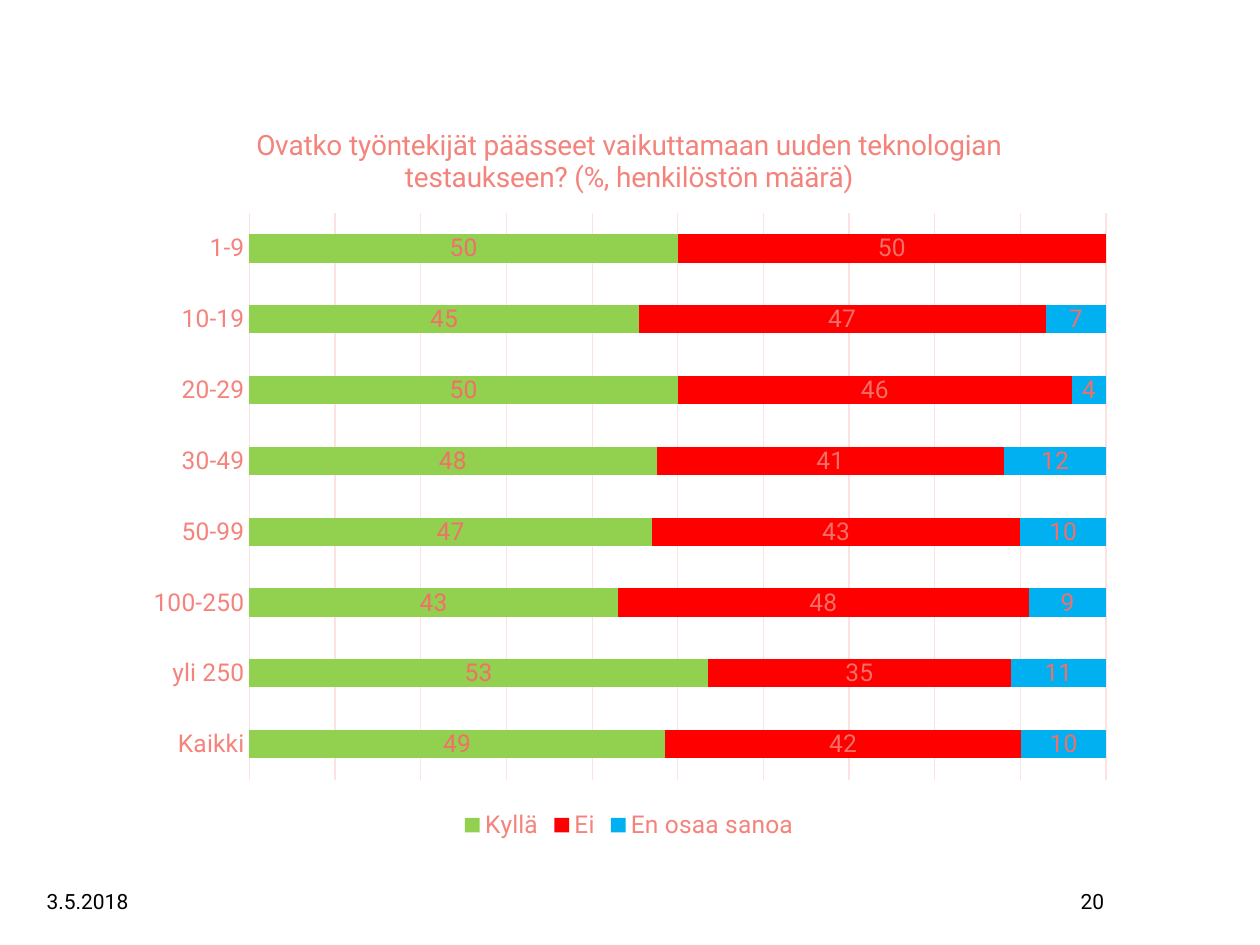
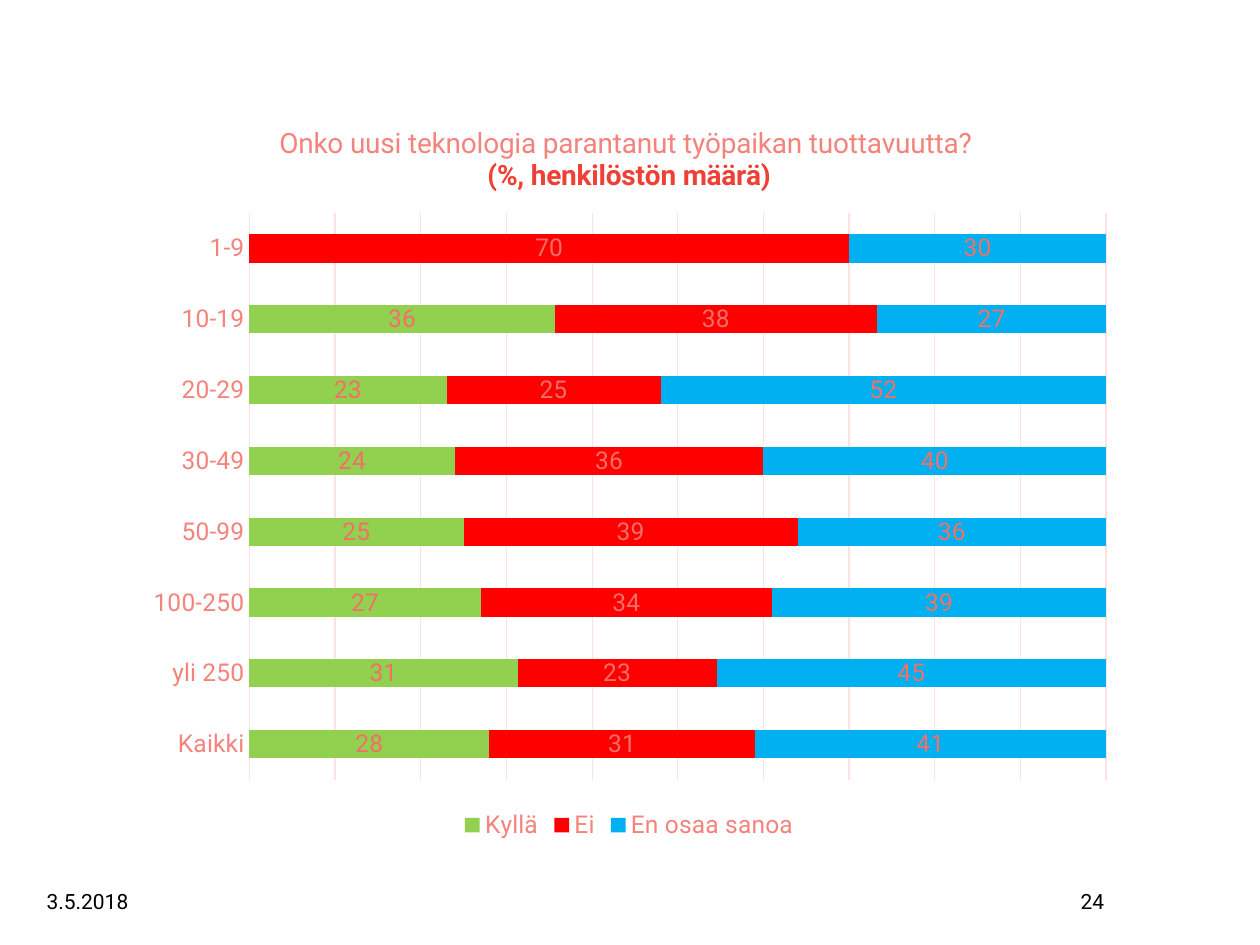
import lxml.etree
import pptx
import pptx.chart.data
import pptx.dml.color
import pptx.enum.chart
import pptx.enum.text
import pptx.oxml
import pptx.oxml.ns
import pptx.util

Cm = pptx.util.Cm
Pt = pptx.util.Pt

FONT = "Roboto"
BLACK = "000000"
TITLE_COLOUR = "F4837C"
STRONG_COLOUR = "EE4035"
LABEL_COLOUR = "F27068"
GRID_COLOUR = "FCE2E1"

SURVEY_DATE = "3.5.2018"
STAFF_SIZES = ["1-9", "10-19", "20-29", "30-49", "50-99", "100-250", "yli 250", "Kaikki"]
ANSWER_COLOURS = {"Kyllä": "92D050", "Ei": "FF0000", "En osaa sanoa": "00B0F0"}
PLOT_FRAME = {"x": 0.117, "y": 0.151, "w": 0.864, "h": 0.761}

# Each title paragraph is (text, bold, colour); answer rows follow ANSWER_COLOURS.
QUESTIONS = [
    {
        "number": "20",
        "title": [
            ("Ovatko työntekijät päässeet vaikuttamaan uuden teknologian "
             "testaukseen? (%, henkilöstön määrä)", False, TITLE_COLOUR),
        ],
        "answers": [
            [50, 45, 50, 48, 47, 43, 53, 49],
            [50, 47, 46, 41, 43, 48, 35, 42],
            [None, 7, 4, 12, 10, 9, 11, 10],
        ],
    },
    {
        "number": "24",
        "title": [
            ("Onko uusi teknologia parantanut työpaikan tuottavuutta? ", False, TITLE_COLOUR),
            ("(%, henkilöstön määrä)", True, STRONG_COLOUR),
        ],
        "answers": [
            [None, 36, 23, 24, 25, 27, 31, 28],
            [70, 38, 25, 36, 39, 34, 23, 31],
            [30, 27, 52, 40, 36, 39, 45, 41],
        ],
    },
]


def colour(hex_string):
    return pptx.dml.color.RGBColor.from_string(hex_string)


class SurveyDeck:
    def __init__(self):
        self.deck = pptx.Presentation()
        self.deck.slide_width, self.deck.slide_height = Cm(25.4), Cm(19.05)
        self.page = None

    def add_page(self):
        self.page = self.deck.slides.add_slide(self.deck.slide_layouts[6])
        fill = self.page.background.fill
        fill.solid()
        fill.fore_color.rgb = colour("FFFFFF")

    def style_font(self, font, size, hex_string, bold=False):
        font.name = FONT
        font.size = Pt(size)
        font.bold = bold
        font.color.rgb = colour(hex_string)

    def style_line(self, line):
        line.color.rgb = colour(GRID_COLOUR)
        line.width = Pt(0.75)

    def add_footer(self, text, left, width, align):
        box = self.page.shapes.add_textbox(Cm(left), Cm(17.65), Cm(width), Cm(1.02))
        frame = box.text_frame
        frame.word_wrap = True
        frame.vertical_anchor = pptx.enum.text.MSO_ANCHOR.MIDDLE
        para = frame.paragraphs[0]
        para.alignment = align
        span = para.add_run()
        span.text = text
        self.style_font(span.font, 12, BLACK)

    def add_answer_chart(self, title, answers):
        data = pptx.chart.data.CategoryChartData()
        data.categories = STAFF_SIZES
        for answer, values in zip(ANSWER_COLOURS, answers):
            data.add_series(answer, values)
        chart = self.page.shapes.add_chart(
            pptx.enum.chart.XL_CHART_TYPE.BAR_STACKED_100,
            Cm(2.69), Cm(2.03), Cm(19.99), Cm(15.01), data).chart
        self.style_font(chart.font, 10, STRONG_COLOUR)
        self.add_chart_title(chart, title)
        self.style_axes(chart)
        self.style_bars(chart.plots[0])
        self.fix_plot_frame(chart)

        chart.has_legend = True
        chart.legend.position = pptx.enum.chart.XL_LEGEND_POSITION.BOTTOM
        chart.legend.include_in_layout = False
        self.style_font(chart.legend.font, 14, TITLE_COLOUR)

    def add_chart_title(self, chart, title):
        chart.has_title = True
        frame = chart.chart_title.text_frame
        for index, (text, bold, hex_string) in enumerate(title):
            para = frame.add_paragraph() if index else frame.paragraphs[0]
            self.style_font(para.font, 16, hex_string, bold)
            span = para.add_run()
            span.text = text
            self.style_font(span.font, 16, hex_string, bold)

    def style_axes(self, chart):
        sizes = chart.category_axis
        sizes.reverse_order = True
        sizes.major_tick_mark = pptx.enum.chart.XL_TICK_MARK.NONE
        sizes.minor_tick_mark = pptx.enum.chart.XL_TICK_MARK.NONE
        self.style_font(sizes.tick_labels.font, 14, TITLE_COLOUR)
        self.style_line(sizes.format.line)
        shares = chart.value_axis
        shares.visible = False
        shares.has_major_gridlines = True
        self.style_line(shares.major_gridlines.format.line)

    def style_bars(self, plot):
        plot.gap_width = 150
        plot.overlap = 100
        plot.vary_by_categories = False
        for series, hex_string in zip(plot.series, ANSWER_COLOURS.values()):
            series.format.fill.solid()
            series.format.fill.fore_color.rgb = colour(hex_string)
            labels = series.data_labels
            labels.show_value = True
            labels.position = pptx.enum.chart.XL_LABEL_POSITION.CENTER
            self.style_font(labels.font, 14, LABEL_COLOUR)

    def fix_plot_frame(self, chart):
        """Place the inner plot area at fixed fractions of the chart."""
        qn = pptx.oxml.ns.qn
        area = chart.element.find(".//" + qn("c:plotArea"))
        for layout in area.findall(qn("c:layout")):
            area.remove(layout)
        layout = lxml.etree.Element(qn("c:layout"))
        manual = lxml.etree.SubElement(layout, qn("c:manualLayout"))
        settings = {"layoutTarget": "inner", "xMode": "edge", "yMode": "edge", **PLOT_FRAME}
        for tag, value in settings.items():
            lxml.etree.SubElement(manual, qn("c:" + tag)).set("val", str(value))
        area.insert(0, layout)


def main():
    survey = SurveyDeck()
    align = pptx.enum.text.PP_ALIGN
    for question in QUESTIONS:
        survey.add_page()
        survey.add_footer(SURVEY_DATE, 0.69, 6.07, align.LEFT)
        survey.add_answer_chart(question["title"], question["answers"])
        survey.add_footer(question["number"], 20.12, 2.39, align.RIGHT)
    survey.deck.save("out.pptx")


if __name__ == "__main__":
    main()
